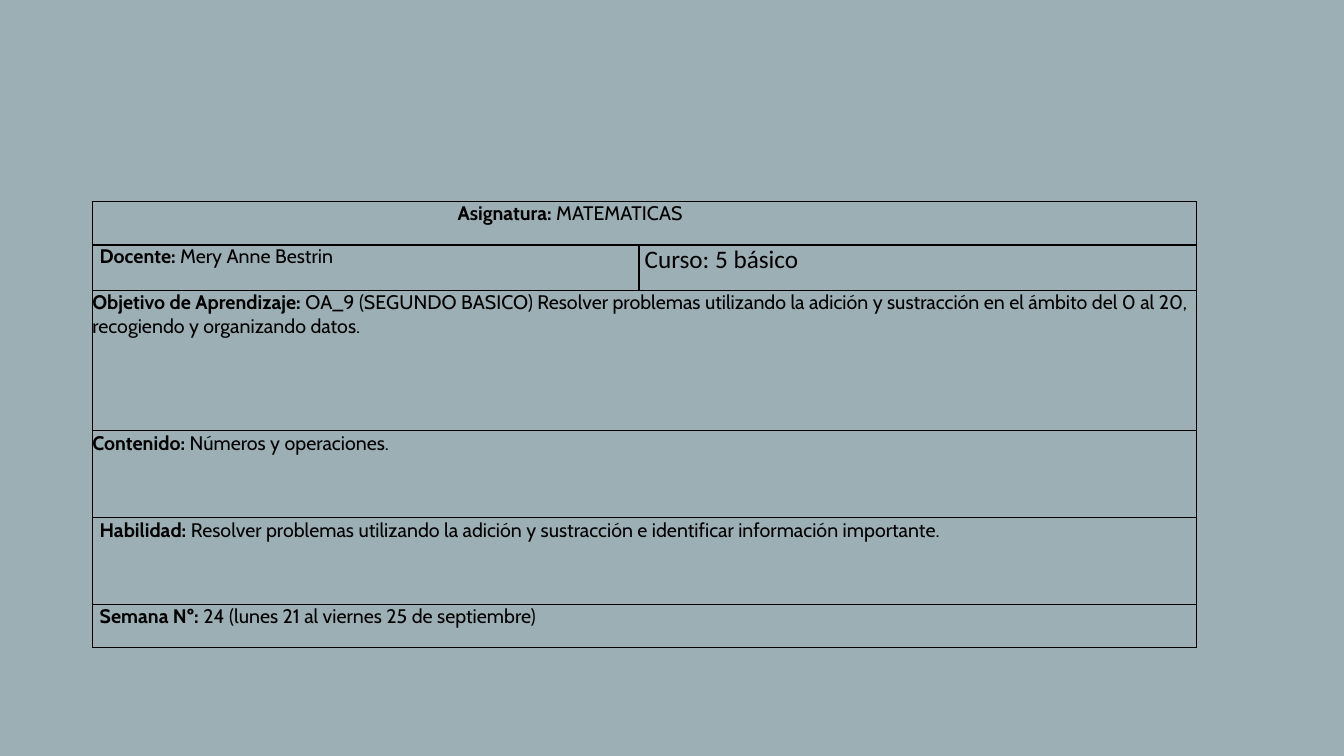
"""Build a lesson plan slide with one bordered table."""
from lxml import etree
from pptx import Presentation
from pptx.dml.color import RGBColor
from pptx.enum.text import PP_ALIGN
from pptx.oxml.ns import qn
from pptx.util import Pt

LEFT, CENTER = PP_ALIGN.LEFT, PP_ALIGN.CENTER
BACKGROUND, INK = "9BAFB5", "000000"
INDENT = 5.2
EXACT = Pt(16.9)

COLUMNS = [390.5, 398]
ROW_HEIGHTS = [31, 32.6, 100.1, 62, 62, 31]
# row, column, label, value, font, size, align, left, right, line spacing
CELLS = [
    (0, 0, "Asignatura:", " MATEMATICAS", "Cabin", 14, CENTER, 0, 106, EXACT),
    (1, 0, "Docente: ", "Mery Anne Bestrin", "Cabin", 14, LEFT, INDENT, 0, EXACT),
    (1, 1, "", "Curso: 5 básico", "Calibri", 18, LEFT, 4, 0, 1.0),
    (2, 0, "Objetivo de Aprendizaje: ",
     "OA_9 (SEGUNDO BASICO) Resolver problemas utilizando la adición y sustracción "
     "en el ámbito del 0 al 20, recogiendo y organizando datos.",
     "Cabin", 14, LEFT, 0, 0, 1.0),
    (3, 0, "Contenido: ", "Números y operaciones.", "Cabin", 14, LEFT, 0, 0, 1.05),
    (4, 0, "Habilidad: ",
     "Resolver problemas utilizando la adición y sustracción e identificar "
     "información importante.", "Cabin", 14, LEFT, INDENT, 0, 1.05),
    (5, 0, "Semana Nº: ", "24 (lunes 21 al viernes 25 de septiembre)",
     "Cabin", 14, LEFT, INDENT, 0, EXACT),
]


def color(value):
    return RGBColor.from_string(value)


def add_borders(cell):
    tcPr = cell._tc.get_or_add_tcPr()
    for i, side in enumerate(("lnL", "lnR", "lnT", "lnB")):
        ln = etree.Element(qn("a:" + side), w=str(Pt(1)))
        fill = etree.SubElement(ln, qn("a:solidFill"))
        etree.SubElement(fill, qn("a:srgbClr"), val=INK)
        tcPr.insert(i, ln)


def style_cell(cell):
    cell.margin_left = cell.margin_right = cell.margin_top = cell.margin_bottom = 0
    cell.fill.background()
    add_borders(cell)


def write_cell(cell, label, value, font, size, align, left, right, spacing):
    cell.margin_left, cell.margin_right = Pt(left), Pt(right)
    p = cell.text_frame.paragraphs[0]
    p.alignment, p.line_spacing = align, spacing
    for text, bold in ((label, True), (value, False)):
        if text:
            r = p.add_run()
            r.text = text
            r.font.name, r.font.size, r.font.bold = font, Pt(size), bold
            r.font.color.rgb = color(INK)


def main():
    prs = Presentation()
    prs.slide_width, prs.slide_height = Pt(960), Pt(540)
    s = prs.slides.add_slide(prs.slide_layouts[6])
    s.background.fill.solid()
    s.background.fill.fore_color.rgb = color(BACKGROUND)

    table = s.shapes.add_table(len(ROW_HEIGHTS), len(COLUMNS), Pt(66), Pt(144),
                               Pt(sum(COLUMNS)), Pt(sum(ROW_HEIGHTS))).table
    table.first_row = table.horz_banding = False
    for column, width in zip(table.columns, COLUMNS):
        column.width = Pt(width)
    for row, height in zip(table.rows, ROW_HEIGHTS):
        row.height = Pt(height)
    for cell in table.iter_cells():
        style_cell(cell)

    split_rows = {row for row, column, *_ in CELLS if column == 1}
    for row in range(len(ROW_HEIGHTS)):
        if row not in split_rows:
            table.cell(row, 0).merge(table.cell(row, 1))
    for row, column, *content in CELLS:
        write_cell(table.cell(row, column), *content)
    prs.save("out.pptx")


if __name__ == "__main__":
    main()
